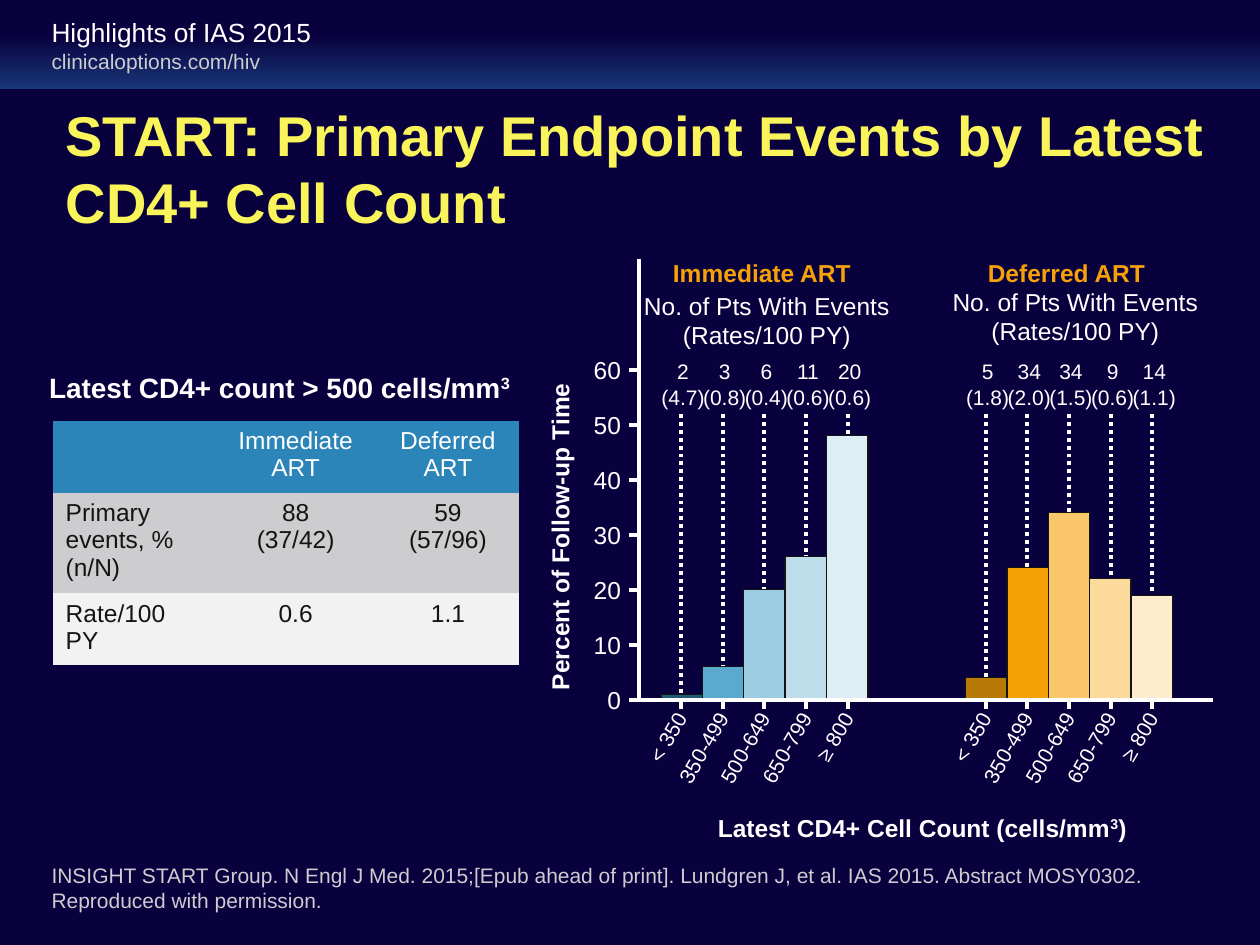
from lxml.etree import SubElement
from pptx import Presentation
from pptx.chart.data import CategoryChartData as ChartData
from pptx.dml.color import RGBColor as Rgb
from pptx.enum.chart import XL_CHART_TYPE as Kind
from pptx.enum.dml import MSO_LINE_DASH_STYLE as Dash
from pptx.enum.shapes import MSO_CONNECTOR as Link, MSO_SHAPE as Shape
from pptx.enum.text import MSO_ANCHOR as Anchor, MSO_AUTO_SIZE as Fit, PP_ALIGN as Align
from pptx.oxml import parse_xml
from pptx.oxml.ns import nsdecls, qn
from pptx.util import Cm, Pt

FONT = "Arial"
PLAIN = "{2D5ABB26-0587-4C30-8999-92F81FD0307C}"
INK = {
    "back": "09003E", "glow": "183678", "white": "FFFFFF", "gray": "CDCDCF",
    "yellow": "F8F45A", "orange": "F6A108", "dark": "141415",
    "head": "2B85B8", "pale": "F2F2F2",
}
BANDS = ["< 350", "350-499", "500-649", "650-799", "≥ 800"]
ARMS = [
    {"name": "Immediate ART", "left": 0.43, "note": (0.05, 0.51),
     "shares": [1, 6, 20, 26, 48],
     "counts": ["2\n(4.7)", "3\n(0.8)", "6\n(0.4)", "11\n(0.6)", "20\n(0.6)"],
     "fills": ["225972", "5AAACE", "9CCCE2", "BDDDEB", "DEEEF5"]},
    {"name": "Deferred ART", "left": 6.57, "note": (0.13, 0.43),
     "shares": [4, 24, 34, 22, 19],
     "counts": ["5\n(1.8)", "34\n(2.0)", "34\n(1.5)", "9\n(0.6)", "14\n(1.1)"],
     "fills": ["B97906", "F6A108", "FAC76A", "FCDA9C", "FDECCD"]},
]
ROWS = [
    ["", "Immediate ART", "Deferred ART"],
    ["Primary events, % (n/N)", "88\n(37/42)", "59\n(57/96)"],
    ["Rate/100 PY", "0.6", "1.1"],
]
STEP = 0.84


def tint(name):
    return Rgb.from_string(INK.get(name, name))


def write(frame, text, size=14, ink="white", bold=False, align=Align.LEFT,
          anchor=Anchor.TOP):
    frame.word_wrap = True
    frame.vertical_anchor = anchor
    for i, line in enumerate(text.split("\n")):
        para = frame.paragraphs[0] if i == 0 else frame.add_paragraph()
        para.alignment = align
        for j, part in enumerate(line.split("^")):
            if not part:
                continue
            run = para.add_run()
            run.text = part
            font = run.font
            font.name, font.size, font.bold = FONT, Pt(size), bold
            font.color.rgb = tint(ink)
            if j % 2:
                font._element.set("baseline", "30000")


def label(slide, box, text, turn=0, **style):
    item = slide.shapes.add_textbox(*map(Cm, box))
    item.rotation = turn
    write(item.text_frame, text, **style)


def rule(slide, x1, y1, x2, y2, dash=None):
    line = slide.shapes.add_connector(Link.STRAIGHT, Cm(x1), Cm(y1), Cm(x2), Cm(y2))
    line.line.color.rgb = tint("white")
    line.line.width = Pt(2.25)
    if dash:
        line.line.dash_style = dash
    SubElement(line._element.spPr, qn("a:effectLst"))


def banner(slide, box):
    x, y, w, h = box
    band = slide.shapes.add_shape(Shape.RECTANGLE, *map(Cm, box))
    band.shadow.inherit = False
    band.line.fill.background()
    band.fill.gradient()
    band.fill.gradient_angle = 90
    for stop, ink, spot in zip(band.fill.gradient_stops, ("glow", "back"), (0, 0.6)):
        stop.color.rgb = tint(ink)
        stop.position = spot
    label(slide, (x + 0.79, y + 0.86, 6, 0.76), "clinicaloptions.com/hiv", size=12, ink="gray")
    label(slide, (x + 0.79, y + 0.2, 19.9, 0.89), "Highlights of IAS 2015", size=15)


def heading(slide, box):
    title = slide.shapes.title
    title.left, title.top, title.width, title.height = map(Cm, box)
    title.text_frame.auto_size = Fit.NONE
    write(title.text_frame, "START: Primary Endpoint Events by Latest CD4+ Cell Count",
          size=32, ink="yellow", bold=True, anchor=Anchor.MIDDLE)


def summary(slide, box):
    x, y, w, h = box
    label(slide, (x, y, w, 0.94), "Latest CD4+ count > 500 cells/mm^3^", size=16, bold=True)
    grid = slide.shapes.add_table(3, 3, Cm(x + 0.33), Cm(y + 1.14), Cm(9.4), Cm(h - 1.14))
    table = grid.table
    table.first_row = table.horz_banding = False
    table._tbl.tblPr.find(qn("a:tableStyleId")).text = PLAIN
    for col, wide in zip(table.columns, (3.26, 3.26, 2.88)):
        col.width = Cm(wide)
    for row, tall in zip(table.rows, (1.45, 2.03, 1.45)):
        row.height = Cm(tall)
    for r, (texts, fill) in enumerate(zip(ROWS, ("head", "gray", "pale"))):
        for c, text in enumerate(texts):
            cell = table.cell(r, c)
            cell.fill.solid()
            cell.fill.fore_color.rgb = tint(fill)
            write(cell.text_frame, text, ink="dark" if r else "white",
                  align=Align.CENTER if c else Align.LEFT)


def bars(slide, box, arm):
    data = ChartData()
    data.categories = BANDS
    data.add_series(arm["name"], arm["shares"])
    chart = slide.shapes.add_chart(Kind.COLUMN_CLUSTERED, *map(Cm, box), data).chart
    chart.has_legend = chart.has_title = False
    chart.font.name, chart.font.size = FONT, Pt(12)
    chart.font.color.rgb = tint("white")
    axis = chart.value_axis
    axis.minimum_scale, axis.maximum_scale = 0, 60
    axis.has_major_gridlines = False
    axis.visible = chart.category_axis.visible = False
    plot = chart.plots[0]
    plot.gap_width = 0
    plot.vary_by_categories = False
    for i, fill in enumerate(arm["fills"]):
        look = plot.series[0].points[i].format
        look.fill.solid()
        look.fill.fore_color.rgb = tint(fill)
        look.line.color.rgb = tint("dark")
        look.line.width = Pt(0.75)
    root = chart._chartSpace
    area = root.find(".//" + qn("c:plotArea"))
    for old in area.findall(qn("c:layout")):
        area.remove(old)
    area.insert(0, parse_xml(
        f'<c:layout {nsdecls("c")}><c:manualLayout><c:layoutTarget val="inner"/>'
        '<c:xMode val="edge"/><c:yMode val="edge"/><c:x val="0"/><c:y val="0"/>'
        '<c:w val="1"/><c:h val="1"/></c:manualLayout></c:layout>'))
    clear = f'<c:spPr {nsdecls("c", "a")}><a:noFill/><a:ln><a:noFill/></a:ln></c:spPr>'
    area.append(parse_xml(clear))
    root.find(qn("c:chart")).addnext(parse_xml(clear))


def group(slide, box, arm):
    x, y, w, h = box
    base, mid = y + h, x + w / 2
    right, down = arm["note"]
    label(slide, (mid - 2.7, y - 0.15, 5.3, 0.86), arm["name"], ink="orange",
          bold=True, align=Align.CENTER)
    label(slide, (mid - 2.87 + right, y + down, 5.74, 1.45),
          "No. of Pts With Events (Rates/100 PY)", align=Align.CENTER)
    for i, (band, count) in enumerate(zip(BANDS, arm["counts"])):
        spot = x + (i + 0.5) * STEP
        rule(slide, spot, base, spot, base + 0.18)
        rule(slide, spot, base, spot, base - 5.81, dash=Dash.ROUND_DOT)
        label(slide, (spot - 0.75, base - 7.01, 1.58, 1.3), count, size=12, align=Align.CENTER)
        label(slide, (spot - 2.32, base + 1.09, 3.25, 0.76), band, turn=300,
              size=12, align=Align.RIGHT)
    tall = h * 6 / 8
    bars(slide, (x, base - tall, w, tall), arm)


def graph(slide, box):
    x, y, w, h = box
    base = y + h
    rule(slide, x, base, x, y)
    for i in range(7):
        tick = base - i * h / 8
        rule(slide, x, tick, x - 0.2, tick)
        label(slide, (x - 1.38, tick - 0.43, 1.27, 0.86), str(i * 10), align=Align.RIGHT)
    label(slide, (x - 4.98, y + 5.16, 6.78, 0.86), "Percent of Follow-up Time",
          turn=270, bold=True, align=Align.CENTER)
    label(slide, (x - 0.21, base + 2.14, 11.84, 0.86), "Latest CD4+ Cell Count (cells/mm^3^)",
          bold=True, align=Align.CENTER)
    for arm in ARMS:
        group(slide, (x + arm["left"], y, STEP * 5, h), arm)
    rule(slide, x - 0.13, base, x + w, base)


def source(slide, box):
    label(slide, box, "INSIGHT START Group. N Engl J Med. 2015;[Epub ahead of print]. "
          "Lundgren J, et al. IAS 2015. Abstract MOSY0302. Reproduced with permission.",
          size=12, ink="gray", anchor=Anchor.BOTTOM)


def main():
    deck = Presentation()
    deck.slide_width, deck.slide_height = Cm(25.4), Cm(19.05)
    slide = deck.slides.add_slide(deck.slide_layouts[5])
    slide.background.fill.solid()
    slide.background.fill.fore_color.rgb = tint("back")
    banner(slide, (0, 0, 25.4, 1.79))
    heading(slide, (1.07, 1.85, 23.52, 3.07))
    summary(slide, (0.74, 7.34, 10.57, 6.07))
    graph(slide, (12.88, 5.23, 11.58, 8.89))
    source(slide, (0.79, 17.22, 23.77, 1.3))
    deck.save("out.pptx")


if __name__ == "__main__":
    main()
